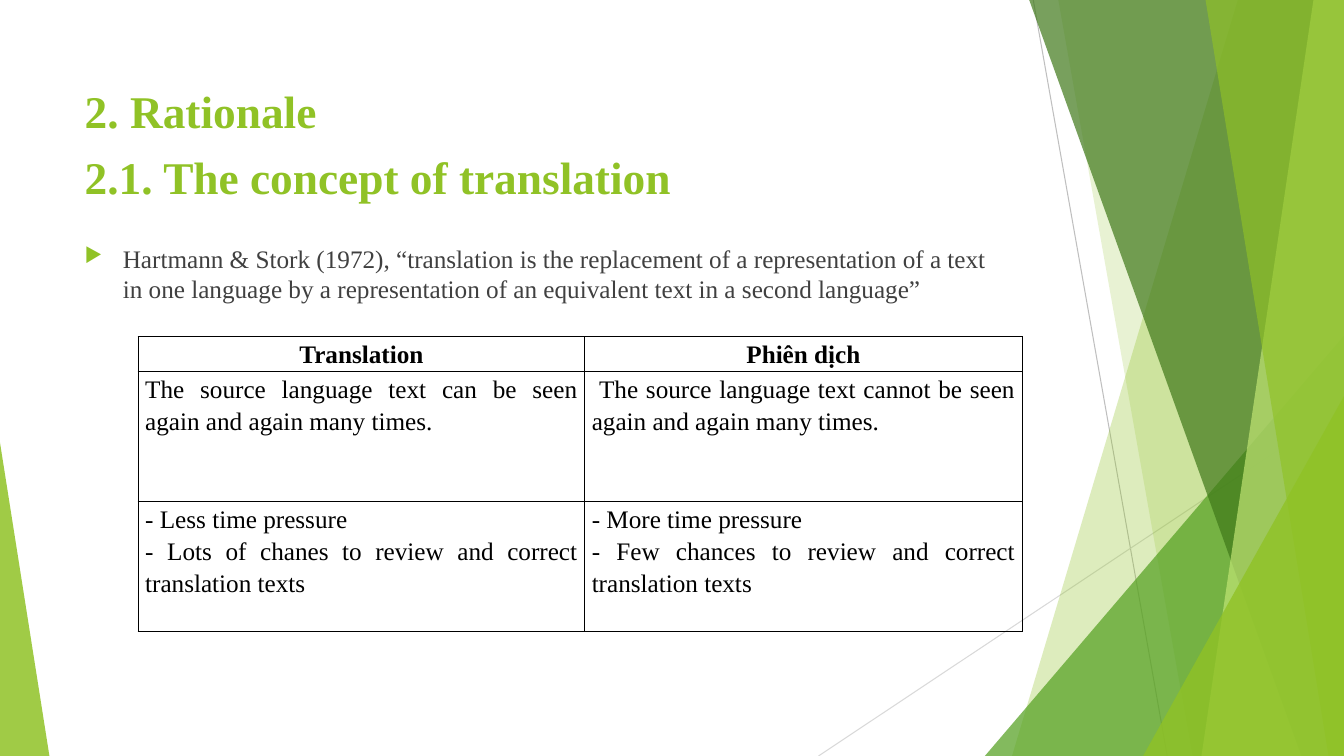
from lxml.etree import SubElement
from pptx import Presentation
from pptx.dml.color import RGBColor
from pptx.enum.shapes import MSO_CONNECTOR, MSO_SHAPE
from pptx.enum.text import MSO_ANCHOR, PP_ALIGN
from pptx.oxml import parse_xml
from pptx.oxml.ns import nsdecls, qn
from pptx.util import Inches, Pt

W, H = Inches(13.333), Inches(7.5)
LIME, GREEN, FOREST, PALE = "90C226", "54A021", "3F7819", "C0E474"
BLACK, GREY = "000000", "404040"
COLUMNS = (33.23, 32.55)
ROWS = (3.6, 17.2, 17.2)
CELLS = (
    (("Translation",), ("Phiên dịch",)),
    (("The source language text can be seen again and again many times.",),
     (" The source language text cannot be seen again and again many times.",)),
    (("- Less time pressure",
      "- Lots of chanes to review and correct translation texts"),
     ("- More time pressure",
      "- Few chances to review and correct translation texts")),
)
QUOTE = ("Hartmann & Stork (1972), “translation is the replacement of a representation "
         "of a text in one language by a representation of an equivalent text "
         "in a second language”")


def x(share):
    return int(W * share / 100)


def y(share):
    return int(H * share / 100)


def box(left, top, width, height):
    return x(left), y(top), x(width), y(height)


def paint(target, color):
    target.rgb = RGBColor.from_string(color)


def apply(obj, values):
    for name, value in values.items():
        setattr(obj, name, value)


def write(tf, lines, font, color, para):
    for i, line in enumerate(lines):
        p = tf.paragraphs[0] if i == 0 else tf.add_paragraph()
        apply(p, para)
        r = p.add_run()
        r.text = line
        apply(r.font, {"name": "Times New Roman", **font})
        paint(r.font.color, color)


def fill_glass(s, color, opacity):
    s.shadow.inherit = False
    s.line.fill.background()
    s.fill.solid()
    paint(s.fill.fore_color, color)
    tint = s.fill._xPr.find(qn("a:solidFill"))[0]
    SubElement(tint, qn("a:alpha"), val=str(opacity * 1000))


def add_band(slide, top_x, bottom_x, color, opacity):
    fb = slide.shapes.build_freeform(x(top_x), 0)
    fb.add_line_segments([(W, 0), (W, H), (x(bottom_x), H)], close=True)
    fill_glass(fb.convert_to_shape(), color, opacity)


def add_corner(slide, left, top, width, apex, color, opacity):
    s = slide.shapes.add_shape(MSO_SHAPE.ISOSCELES_TRIANGLE,
                               *box(left, top, width, 100 - top))
    s.adjustments[0] = apex
    fill_glass(s, color, opacity)


def add_hairline(slide, start, end, color):
    s = slide.shapes.add_connector(MSO_CONNECTOR.STRAIGHT, x(start[0]), y(start[1]),
                                   x(end[0]), y(end[1]))
    s.line.width = Pt(0.75)
    paint(s.line.color, color)
    SubElement(s._element.spPr, qn("a:effectLst"))


def add_facets(slide):
    add_hairline(slide, (76.88, 0), (86.85, 100), "BFBFBF")
    add_hairline(slide, (100, 53.73), (60.9, 100), "D9D9D9")
    add_band(slide, 92.1, 75.3, LIME, 30)
    add_band(slide, 78.75, 88.73, LIME, 20)
    add_corner(slide, 73.28, 44.4, 26.72, 1, GREEN, 72)
    add_band(slide, 76.58, 96.83, FOREST, 70)
    add_band(slide, 97.73, 89.4, PALE, 70)
    add_band(slide, 89.7, 98.85, LIME, 65)
    add_corner(slide, 85.05, 52.4, 14.95, 1, LIME, 80)
    add_corner(slide, 0, 58.53, 3.68, 0, LIME, 85)


def set_title(slide, lines):
    s = slide.shapes.title
    apply(s, dict(zip(("left", "top", "width", "height"), box(5.55, 8.93, 70.5, 19.2))))
    apply(s.text_frame, {"vertical_anchor": MSO_ANCHOR.TOP, "word_wrap": True})
    write(s.text_frame, lines, {"size": Pt(32.4), "bold": True}, LIME,
          {"alignment": PP_ALIGN.LEFT, "line_spacing": 1.2, "space_before": Pt(0)})


def add_bullet(slide, text):
    tf = slide.shapes.add_textbox(*box(5.55, 31.47, 70.5, 56.53)).text_frame
    tf.word_wrap = True
    write(tf, [text], {"size": Pt(18)}, GREY, {"space_before": Pt(10)})
    pPr = tf.paragraphs[0]._p.get_or_add_pPr()
    pPr.set("marL", str(Inches(0.38)))
    pPr.set("indent", str(-Inches(0.38)))
    SubElement(SubElement(pPr, qn("a:buClr")), qn("a:srgbClr"), val=LIME)
    SubElement(pPr, qn("a:buSzPct"), val="80000")
    SubElement(pPr, qn("a:buChar"), char="▶")


def outline(cell):
    tcPr = cell._tc.get_or_add_tcPr()
    for i, side in enumerate("LRTB"):
        tcPr.insert(i, parse_xml(
            f'<a:ln{side} {nsdecls("a")} w="{Pt(1)}"><a:solidFill>'
            f'<a:srgbClr val="{BLACK}"/></a:solidFill></a:ln{side}>'))


def add_comparison(slide):
    frame = slide.shapes.add_table(len(ROWS), len(COLUMNS),
                                   *box(10.28, 44.53, sum(COLUMNS), sum(ROWS)))
    table = frame.table
    apply(table, {"first_row": False, "horz_banding": False})
    for column, share in zip(table.columns, COLUMNS):
        column.width = x(share)
    margin = Inches(0.07)
    for i, (row, share) in enumerate(zip(table.rows, ROWS)):
        row.height = y(share)
        header = i == 0
        align = PP_ALIGN.CENTER if header else PP_ALIGN.JUSTIFY
        for cell, lines in zip(row.cells, CELLS[i]):
            apply(cell, {"margin_left": margin, "margin_right": margin,
                         "margin_top": 0, "margin_bottom": 0})
            cell.fill.background()
            outline(cell)
            write(cell.text_frame, lines, {"size": Pt(18), "bold": header}, BLACK,
                  {"alignment": align, "line_spacing": 1.15})


def main():
    prs = Presentation()
    apply(prs, {"slide_width": W, "slide_height": H})
    slide = prs.slides.add_slide(prs.slide_layouts[5])
    add_facets(slide)
    set_title(slide, ["2. Rationale", "2.1. The concept of translation"])
    add_bullet(slide, QUOTE)
    add_comparison(slide)
    prs.save("out.pptx")


if __name__ == "__main__":
    main()
